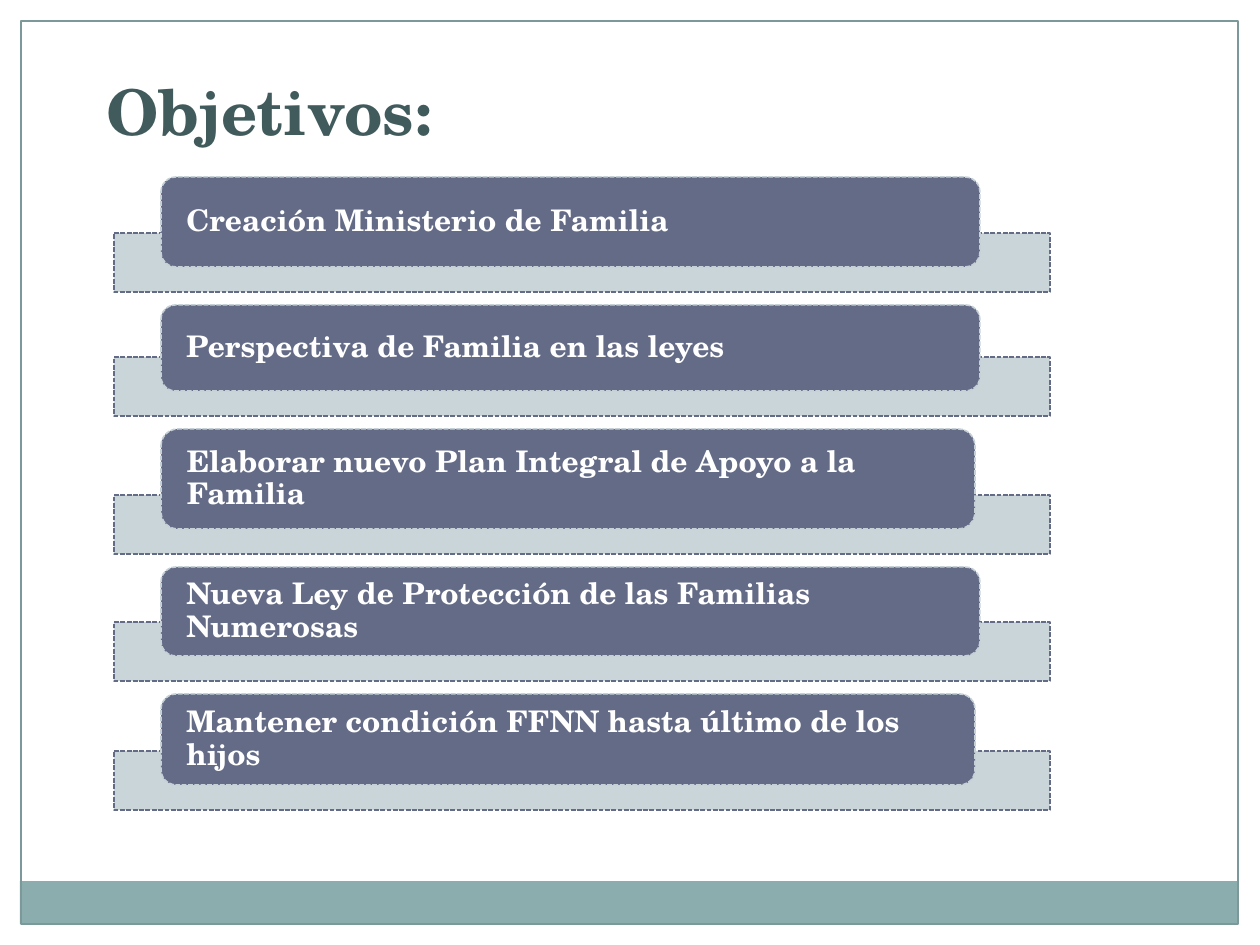
from lxml import etree
from pptx import Presentation
from pptx.dml.color import RGBColor
from pptx.enum.dml import MSO_LINE
from pptx.enum.shapes import MSO_SHAPE
from pptx.enum.text import MSO_ANCHOR, PP_ALIGN
from pptx.oxml.ns import qn
from pptx.util import Pt

EMU_PER_PX = 914400 / 126
FONT = "TeX Gyre Schola"
SLATE, MIST, TEAL = "646B86", "C5D1D7", "8CADAE"

# Objective, height and width of its pill
OBJECTIVES = [
    ("Creación Ministerio de Familia", 90, 819),
    ("Perspectiva de Familia en las leyes", 86, 819),
    ("Elaborar nuevo Plan Integral de Apoyo a la Familia", 100, 814),
    ("Nueva Ley de Protección de las Familias Numerosas", 89, 819),
    ("Mantener condición FFNN hasta último de los hijos", 91, 814),
]
LIST_TOP = 177
BAR_HEIGHT = 59
OVERLAP = 34  # how far a pill reaches down over its bar
GAP = 13


def px(length):
    return round(length * EMU_PER_PX)


def color(hex_string):
    return RGBColor.from_string(hex_string)


def add_box(slide, kind, left, top, width, height, fill=None, alpha=None,
            line=None, weight=0.9, dash=None):
    box = slide.shapes.add_shape(kind, px(left), px(top), px(width), px(height))
    box.shadow.inherit = False
    if fill:
        box.fill.solid()
        box.fill.fore_color.rgb = color(fill)
    else:
        box.fill.background()
    if alpha:
        tint = box.fill._xPr.find(qn("a:solidFill"))[0]
        etree.SubElement(tint, qn("a:alpha"), val=str(alpha * 1000))
    if line:
        box.line.color.rgb = color(line)
        box.line.width = Pt(weight)
        box.line.dash_style = dash
    else:
        box.line.fill.background()
    return box


def set_text(holder, text, size, fill, anchor=MSO_ANCHOR.TOP, wrap=True,
             side_inset=None, spacing=None):
    frame = holder.text_frame
    frame.word_wrap = wrap
    frame.vertical_anchor = anchor
    if side_inset is not None:
        frame.margin_left = frame.margin_right = px(side_inset)
        frame.margin_top = frame.margin_bottom = 0
    paragraph = frame.paragraphs[0]
    paragraph.alignment = PP_ALIGN.LEFT
    paragraph.line_spacing = spacing
    run = paragraph.add_run()
    run.text = text
    run.font.name = FONT
    run.font.size = Pt(size)
    run.font.bold = True
    run.font.color.rgb = color(fill)


def add_objective(slide, text, top, height, width):
    """Draw one bar with its pill and return the bottom of the bar."""
    bar_top = top + height - OVERLAP
    add_box(slide, MSO_SHAPE.RECTANGLE, 114, bar_top, 936, BAR_HEIGHT,
            fill=MIST, alpha=90, line=SLATE, dash=MSO_LINE.SQUARE_DOT)
    pill = add_box(slide, MSO_SHAPE.ROUNDED_RECTANGLE, 161, top, width, height,
                   fill=SLATE, line=MIST, dash=MSO_LINE.SQUARE_DOT)
    set_text(pill, text, 17, "FFFFFF", anchor=MSO_ANCHOR.MIDDLE,
             side_inset=21, spacing=0.9)
    return bar_top + BAR_HEIGHT


def main():
    deck = Presentation()
    deck.slide_width, deck.slide_height = px(1260), px(945)
    slide = deck.slides.add_slide(deck.slide_layouts[6])

    # Footer band and page frame
    add_box(slide, MSO_SHAPE.RECTANGLE, 20, 881, 1217, 43, fill=TEAL)
    add_box(slide, MSO_SHAPE.RECTANGLE, 21, 21, 1217, 903,
            line="7C999A", weight=0.75)

    # Title
    title = slide.shapes.add_textbox(px(94), px(66), px(406), px(89))
    set_text(title, "Objetivos:", 36, "415B5C", wrap=False)

    # Objectives, each starting below the bar before it
    top = LIST_TOP
    for text, height, width in OBJECTIVES:
        top = add_objective(slide, text, top, height, width) + GAP

    deck.save("out.pptx")


if __name__ == "__main__":
    main()
